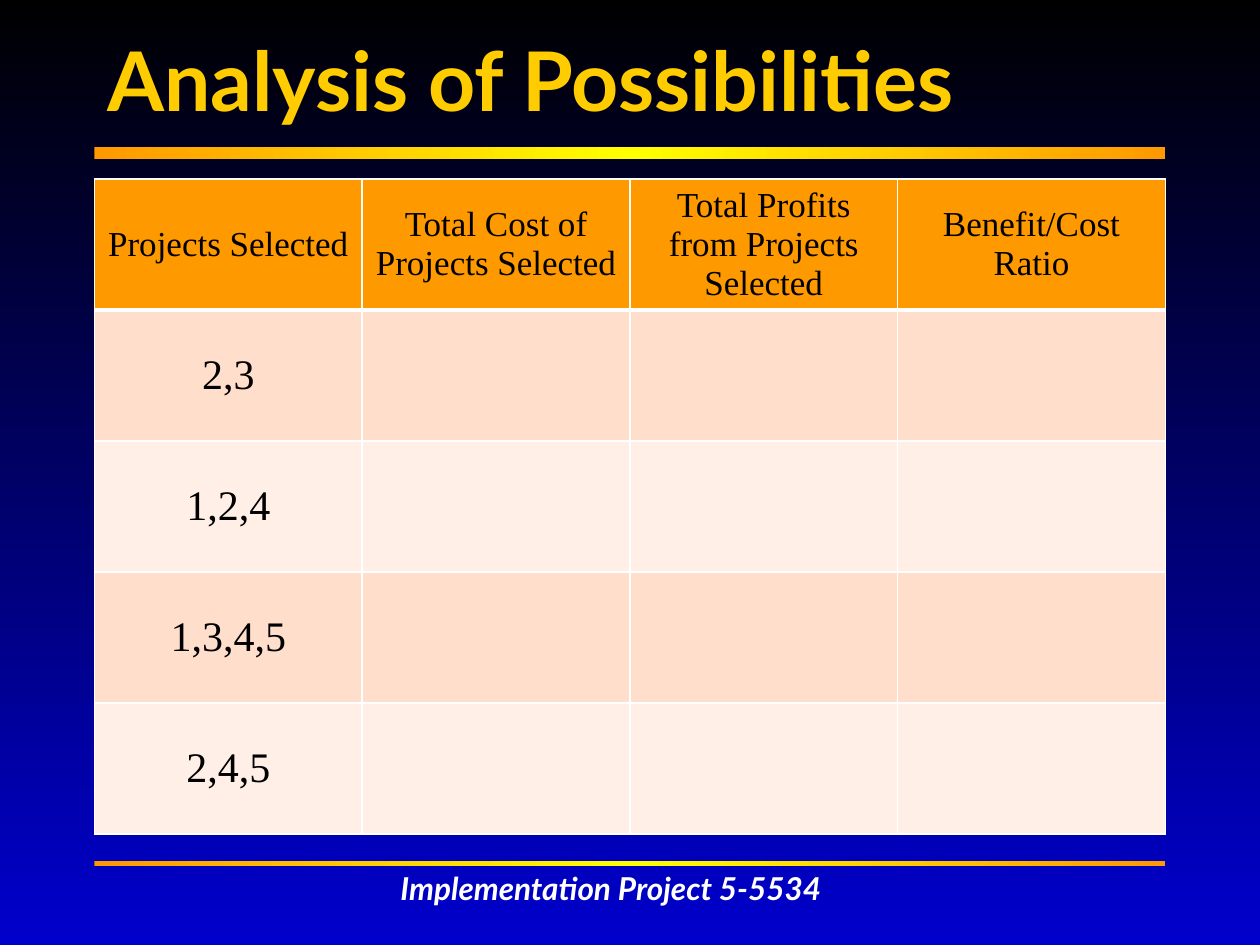
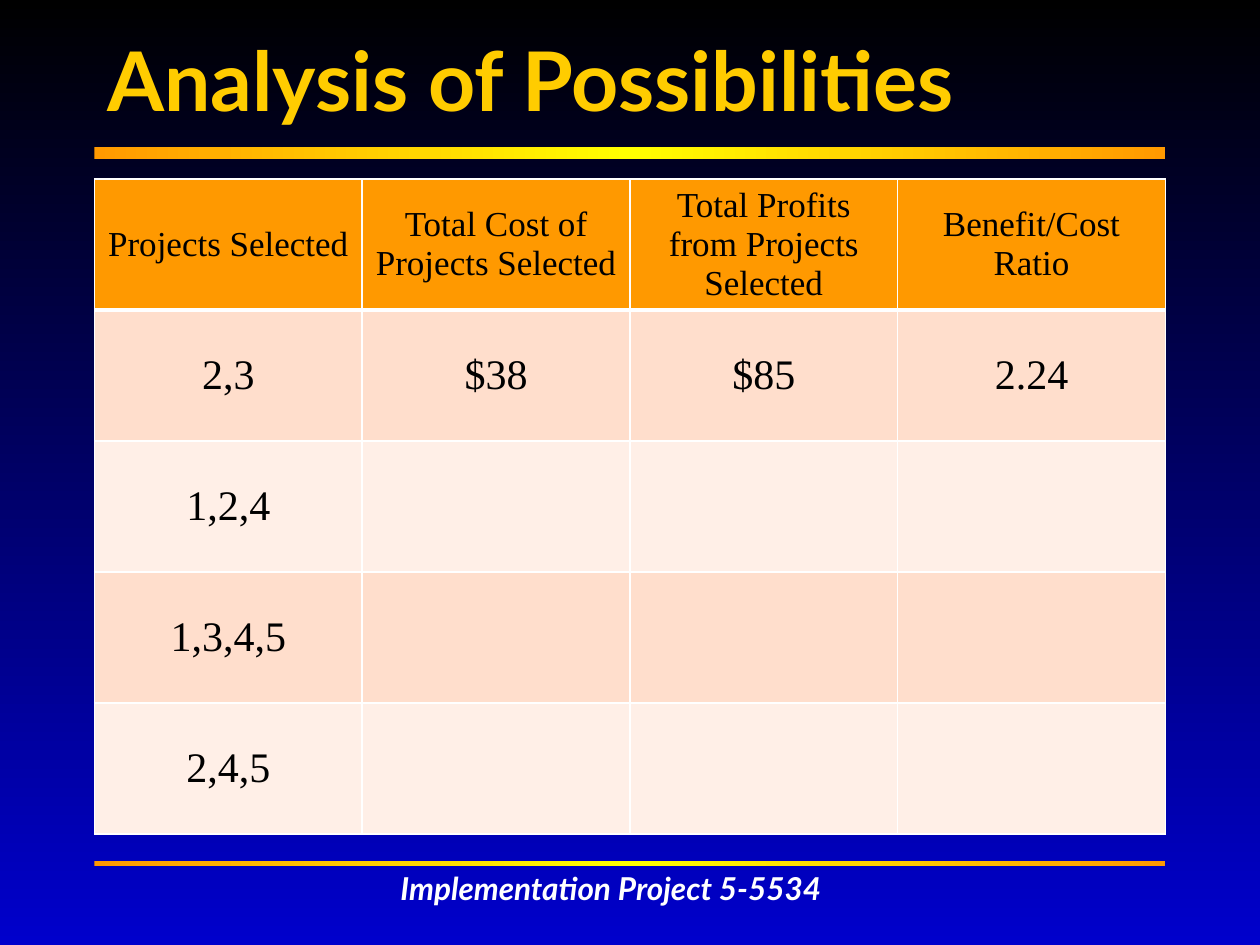
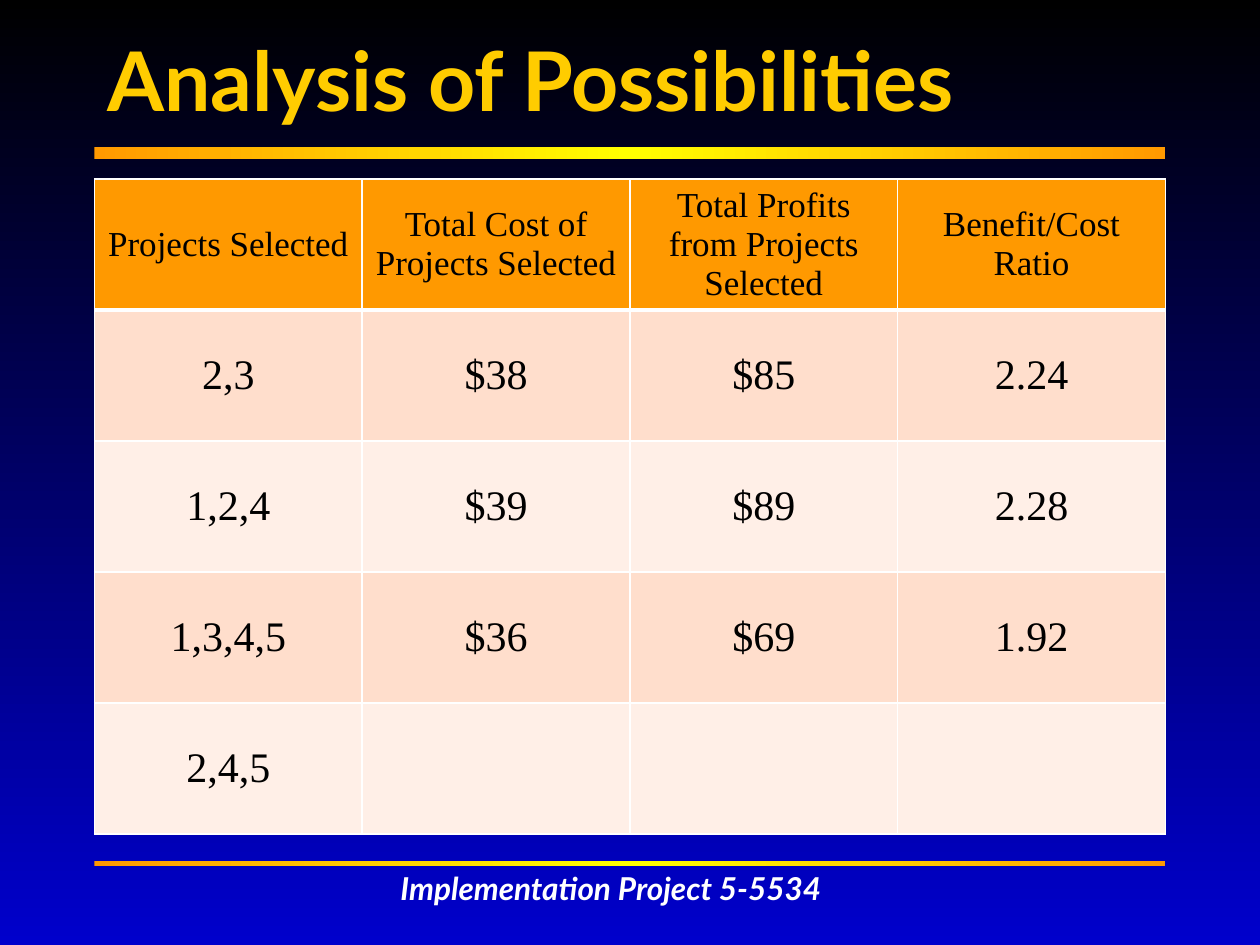
import dataclasses

import lxml.etree
import pptx
import pptx.dml.color
import pptx.enum.shapes
import pptx.enum.text
import pptx.oxml.ns
import pptx.util

COLORS = {
    "black": "000000",
    "blue": "0000CC",
    "orange": "FF9900",
    "yellow": "FFFF00",
    "gold": "FFCC00",
    "white": "FFFFFF",
    "peach": "FFDECC",
    "pale peach": "FFEFE7",
}

SLIDE_W = pptx.util.Inches(10)
SLIDE_H = pptx.util.Inches(7.5)
MARGIN = 0.075 * SLIDE_W
CONTENT_W = SLIDE_W - 2 * MARGIN
TABLE_TOP = pptx.util.Inches(1.42)
ROW_H = pptx.util.Inches(1.04)

TITLE = "Analysis of Possibilities"
FOOTER = "Implementation Project 5-5534"
HEADINGS = (
    "Projects Selected",
    "Total Cost of Projects Selected",
    "Total Profits from Projects Selected",
    "Benefit/Cost Ratio",
)
PROJECT_SETS = ("2,3", "1,2,4", "1,3,4,5", "2,4,5")
RESULTS = (
    ("$38", "$85", "2.24"),
    ("$39", "$89", "2.28"),
    ("$36", "$69", "1.92"),
)
RESULTS_SHOWN = (0, 1, 3)  # completed rows on each slide


@dataclasses.dataclass(frozen=True)
class TextStyle:
    font: str
    size: int
    color: str
    bold: bool = False
    italic: bool = False


@dataclasses.dataclass(frozen=True)
class Band:
    top: float  # inches
    height: float


TITLE_STYLE = TextStyle("Lato", 47, "gold", bold=True)
FOOTER_STYLE = TextStyle("Lato", 18, "white", bold=True, italic=True)
HEADING_STYLE = TextStyle("Times New Roman", 20, "black")
VALUE_STYLE = TextStyle("Times New Roman", 24, "black")
BANDS = (Band(1.17, 0.09), Band(6.83, 0.04))


def rgb(name: str) -> pptx.dml.color.RGBColor:
    return pptx.dml.color.RGBColor.from_string(COLORS[name])


def add_run(paragraph, text: str, style: TextStyle) -> None:
    run = paragraph.add_run()
    run.text = text
    run.font.name = style.font
    run.font.size = pptx.util.Pt(style.size)
    run.font.bold = style.bold
    run.font.italic = style.italic
    run.font.color.rgb = rgb(style.color)


def add_xml(parent, tag: str, **attributes):
    return lxml.etree.SubElement(parent, pptx.oxml.ns.qn(tag), **attributes)


def set_gradient(owner, fill, colors: tuple[str, ...], angle: int) -> None:
    """Spread the colours evenly along a linear gradient."""
    fill.gradient()
    gradient = owner.element.find(".//" + pptx.oxml.ns.qn("a:gradFill"))
    for child in list(gradient):
        gradient.remove(child)
    stops = add_xml(gradient, "a:gsLst")
    for i, color in enumerate(colors):
        position = 100000 * i // (len(colors) - 1)
        stop = add_xml(stops, "a:gs", pos=str(position))
        add_xml(stop, "a:srgbClr", val=COLORS[color])
    add_xml(gradient, "a:lin", ang=str(angle * 60000), scaled="0")


def set_borders(cell, bottom_width: int) -> None:
    properties = cell._tc.get_or_add_tcPr()
    for side, width in (("L", 1), ("R", 1), ("T", 1), ("B", bottom_width)):
        line = add_xml(properties, f"a:ln{side}", w=str(pptx.util.Pt(width)))
        add_xml(add_xml(line, "a:solidFill"), "a:srgbClr", val=COLORS["white"])


def format_layout(layout) -> None:
    """Place the title on the layout that all slides use."""
    title = layout.placeholders[0]
    title.left, title.top = int(MARGIN), 0
    title.width, title.height = int(CONTENT_W), pptx.util.Inches(1.25)
    title.text_frame.vertical_anchor = pptx.enum.text.MSO_ANCHOR.MIDDLE
    title.text_frame.auto_size = pptx.enum.text.MSO_AUTO_SIZE.NONE


def move_frame_to_layout(slide, layout) -> None:
    """Build the bands and footer, then share them through the layout."""
    frame = []
    for band in BANDS:
        bar = slide.shapes.add_shape(
            pptx.enum.shapes.MSO_SHAPE.RECTANGLE,
            int(MARGIN), pptx.util.Inches(band.top),
            int(CONTENT_W), pptx.util.Inches(band.height),
        )
        bar.shadow.inherit = False
        bar.line.fill.background()
        set_gradient(bar, bar.fill, ("orange", "yellow", "orange"), 0)
        frame.append(bar)

    footer = slide.shapes.add_textbox(
        *(pptx.util.Inches(n) for n in (3.08, 6.85, 3.94, 0.4))
    )
    footer.text_frame.word_wrap = False
    footer.text_frame.auto_size = pptx.enum.text.MSO_AUTO_SIZE.SHAPE_TO_FIT_TEXT
    add_run(footer.text_frame.paragraphs[0], FOOTER, FOOTER_STYLE)
    frame.append(footer)

    for part in frame:
        layout.shapes.element.append(part.element)


def add_title(slide) -> None:
    paragraph = slide.shapes.title.text_frame.paragraphs[0]
    paragraph.alignment = pptx.enum.text.PP_ALIGN.LEFT
    add_run(paragraph, TITLE, TITLE_STYLE)


def add_analysis(slide, shown: int) -> None:
    """Draw the table with the first results filled in."""
    rows = [HEADINGS]
    for i, projects in enumerate(PROJECT_SETS):
        results = RESULTS[i] if i < shown else ("",) * (len(HEADINGS) - 1)
        rows.append((projects, *results))

    analysis = slide.shapes.add_table(
        len(rows), len(HEADINGS), int(MARGIN), TABLE_TOP,
        int(CONTENT_W), ROW_H * len(rows),
    ).table
    for r, values in enumerate(rows):
        is_heading = r == 0
        band_color = "peach" if r % 2 else "pale peach"
        for c, value in enumerate(values):
            cell = analysis.cell(r, c)
            set_borders(cell, 3 if is_heading else 1)
            cell.fill.solid()
            cell.fill.fore_color.rgb = rgb("orange" if is_heading else band_color)
            cell.vertical_anchor = pptx.enum.text.MSO_ANCHOR.MIDDLE
            paragraph = cell.text_frame.paragraphs[0]
            paragraph.alignment = pptx.enum.text.PP_ALIGN.CENTER
            if value:
                add_run(paragraph, value, HEADING_STYLE if is_heading else VALUE_STYLE)


def main() -> None:
    deck = pptx.Presentation()
    deck.slide_width, deck.slide_height = SLIDE_W, SLIDE_H

    # Shared background and layout
    master = deck.slide_master
    set_gradient(master, master.background.fill, ("black", "blue"), 90)
    layout = deck.slide_layouts.get_by_name("Title Only")
    format_layout(layout)

    # One slide for each stage of the analysis
    for i, shown in enumerate(RESULTS_SHOWN):
        slide = deck.slides.add_slide(layout)
        if i == 0:
            move_frame_to_layout(slide, layout)
        add_title(slide)
        add_analysis(slide, shown)

    deck.save("out.pptx")


if __name__ == "__main__":
    main()
